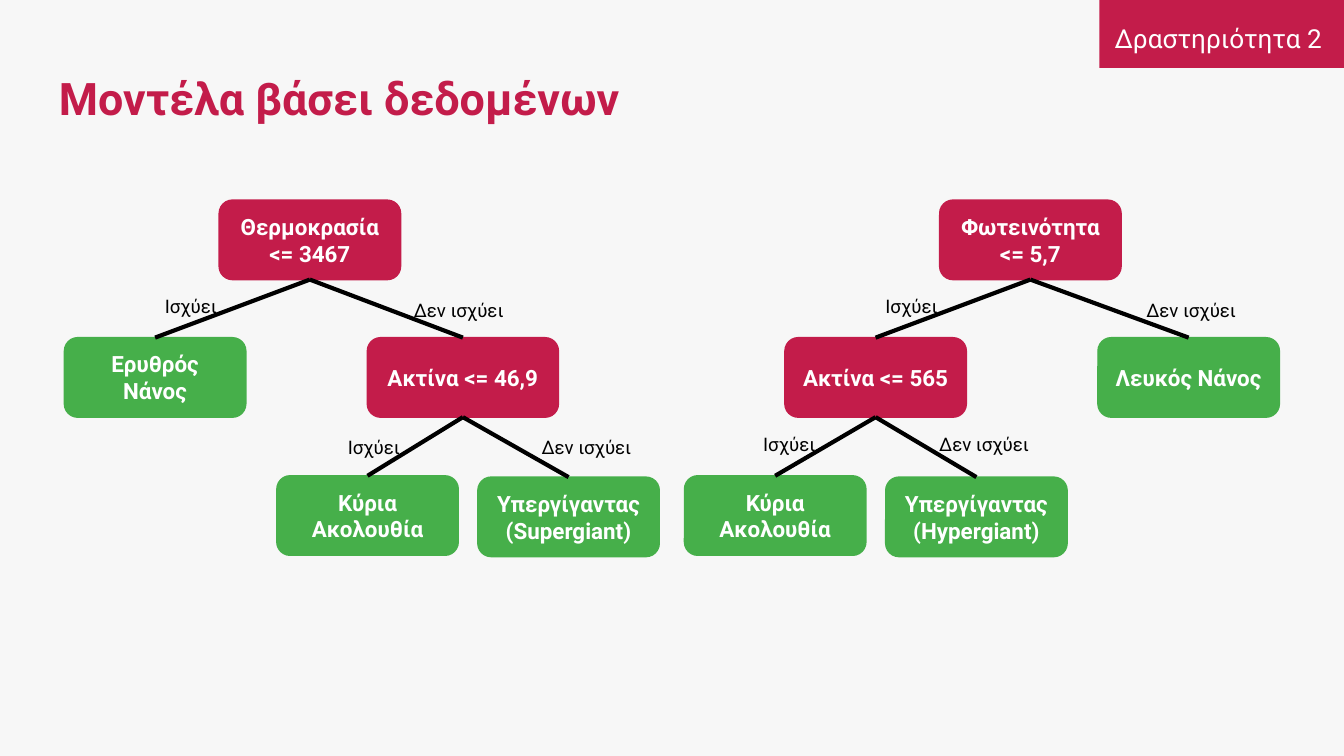
from lxml import etree
from pptx import Presentation
from pptx import util as u
from pptx.dml.color import RGBColor
from pptx.enum import shapes, text
from pptx.oxml.ns import qn

COLOURS = {
    "background": "F7F7F7",
    "question": "C31C4A",
    "answer": "46AF4A",
    "white": "FFFFFF",
    "black": "000000",
}
INSET = 7.2
NODE_WIDTH, NODE_HEIGHT = 97.2, 42.6
ROOT_TOP, MIDDLE_TOP, LEAF_TOP = 107.2, 180.9, 254.9


def colour(name):
    return RGBColor.from_string(COLOURS[name])


def write(shape, words, size, ink, bold=False, align="LEFT", anchor="TOP", spacing=None):
    frame = shape.text_frame
    frame.word_wrap = True
    frame.vertical_anchor = getattr(text.MSO_ANCHOR, anchor)
    for side in ("left", "top", "right", "bottom"):
        setattr(frame, f"margin_{side}", u.Pt(INSET))
    para = frame.paragraphs[0]
    para.alignment = getattr(text.PP_ALIGN, align)
    para.line_spacing = spacing
    span = para.add_run()
    span.text = words
    for name, value in {"name": "Roboto", "size": u.Pt(size), "bold": bold}.items():
        setattr(span.font, name, value)
    span.font.color.rgb = colour(ink)


deck = Presentation()
deck.slide_width, deck.slide_height = u.Pt(720), u.Pt(405)
page = deck.slides.add_slide(deck.slide_layouts[6])
page.background.fill.solid()
page.background.fill.fore_color.rgb = colour("background")

# Heading and corner tag
tag = page.shapes.add_shape(
    shapes.MSO_SHAPE.RECTANGLE, u.Pt(589), u.Pt(0), u.Pt(131), u.Pt(36.4))
tag.shadow.inherit = False
tag.fill.solid()
tag.fill.fore_color.rgb = colour("question")
tag.line.fill.background()

title = page.shapes.add_textbox(u.Pt(24.5), u.Pt(25.2), u.Pt(671), u.Pt(54.7))
write(title, "Μοντέλα βάσει δεδομένων", 24, "question", bold=True, anchor="MIDDLE")

tag_label = page.shapes.add_textbox(u.Pt(589), u.Pt(2.2), u.Pt(127.4), u.Pt(30.2))
write(tag_label, "Δραστηριότητα 2", 14, "white", align="CENTER", spacing=1.15)

# Each tree: nodes (words, kind, left, top, width),
# branches (parent, child), labels (words, left, top, width)
YES, NO = "Ισχύει", "Δεν ισχύει"
trees = [
    {
        "nodes": {
            "root": ("Θερμοκρασία <= 3467", "question", 117.4, ROOT_TOP, NODE_WIDTH),
            "radius": ("Ακτίνα <= 46,9", "question", 196.8, MIDDLE_TOP, 102.4),
            "dwarf": ("Ερυθρός Νάνος", "answer", 34.5, MIDDLE_TOP, NODE_WIDTH),
            "main": ("Κύρια Ακολουθία", "answer", 148.3, LEAF_TOP, NODE_WIDTH),
            "giant": ("Υπεργίγαντας (Supergiant)", "answer", 256, LEAF_TOP + 0.7, NODE_WIDTH),
        },
        "branches": [("root", "radius"), ("root", "dwarf"),
                     ("radius", "giant"), ("radius", "main")],
        "labels": [(YES, 81.2, 149, 44), (NO, 214.6, 151.2, 132.5),
                   (YES, 179.3, 224.6, 44), (NO, 283, 224.6, 70.6)],
    },
    {
        "nodes": {
            "root": ("Φωτεινότητα <= 5,7", "question", 503.4, ROOT_TOP, NODE_WIDTH),
            "dwarf": ("Λευκός Νάνος", "answer", 588.2, MIDDLE_TOP, NODE_WIDTH),
            "radius": ("Ακτίνα <= 565", "question", 420.5, MIDDLE_TOP, NODE_WIDTH),
            "main": ("Κύρια Ακολουθία", "answer", 366.7, LEAF_TOP, NODE_WIDTH),
            "giant": ("Υπεργίγαντας (Hypergiant)", "answer", 474.5, LEAF_TOP + 0.7, NODE_WIDTH),
        },
        "branches": [("root", "dwarf"), ("root", "radius"),
                     ("radius", "giant"), ("radius", "main")],
        "labels": [(YES, 467.3, 149, 44), (NO, 607, 151.2, 74.2),
                   (YES, 401.8, 223.2, 44), (NO, 496.1, 223.2, 131.8)],
    },
]

for tree in trees:
    group = page.shapes.add_group_shape()
    boxes = {}
    for key, (words, kind, left, top, width) in tree["nodes"].items():
        box = group.shapes.add_shape(
            shapes.MSO_SHAPE.ROUNDED_RECTANGLE,
            u.Pt(left), u.Pt(top), u.Pt(width), u.Pt(NODE_HEIGHT))
        box.shadow.inherit = False
        box.fill.solid()
        box.fill.fore_color.rgb = colour(kind)
        box.line.color.rgb = colour(kind)
        box.line.width = u.Pt(0.75)
        write(box, words, 12, "white", bold=True, align="CENTER", anchor="MIDDLE")
        boxes[key] = box

    for parent, child in tree["branches"]:
        branch = group.shapes.add_connector(
            shapes.MSO_CONNECTOR.STRAIGHT, u.Pt(0), u.Pt(0), u.Pt(0), u.Pt(0))
        branch.begin_connect(boxes[parent], 2)
        branch.end_connect(boxes[child], 0)
        branch.line.color.rgb = colour("black")
        branch.line.width = u.Pt(2.25)
        etree.SubElement(branch._element.spPr, qn("a:effectLst"))

    for words, left, top, width in tree["labels"]:
        label = group.shapes.add_textbox(u.Pt(left), u.Pt(top), u.Pt(width), u.Pt(26.6))
        write(label, words, 10, "black", spacing=1.15)

deck.save("out.pptx")
